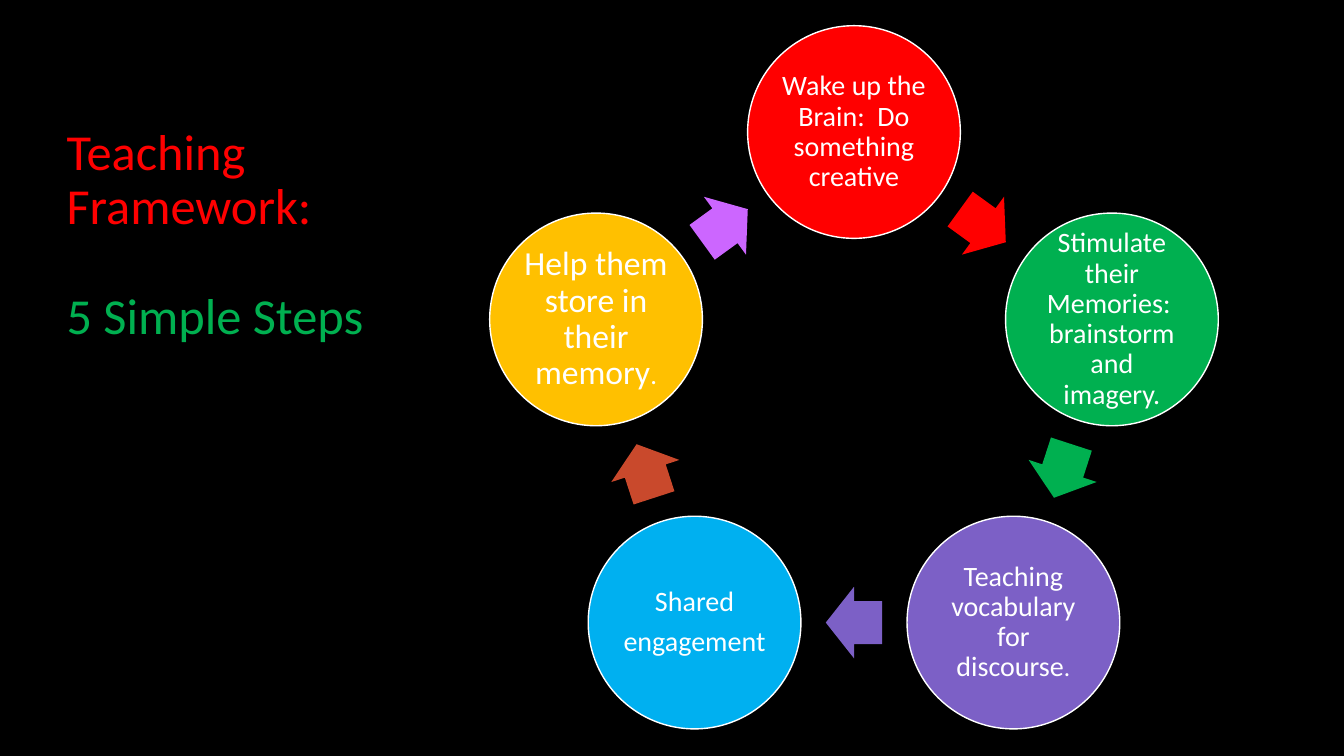
from math import cos, pi, sin

from pptx import Presentation
from pptx.dml.color import RGBColor
from pptx.enum.shapes import MSO_SHAPE
from pptx.enum.text import MSO_ANCHOR, MSO_AUTO_SIZE, PP_ALIGN
from pptx.util import Inches, Pt

ELLIPSE, ARROW = MSO_SHAPE.OVAL, MSO_SHAPE.RIGHT_ARROW
TOP, MIDDLE = MSO_ANCHOR.TOP, MSO_ANCHOR.MIDDLE
LEFT, CENTER = PP_ALIGN.LEFT, PP_ALIGN.CENTER
NO_FIT = MSO_AUTO_SIZE.NONE

THEME = {
    "font": "Calibri",
    "title": 36, "step": 20, "large": 24, "small": 18, "large_stop": 19,
    "black": "000000", "white": "FFFFFF", "red": "FF0000", "green": "00B050",
    "purple": "7C60C6", "blue": "00B0F0", "rust": "C9492C",
    "gold": "FFC000", "pink": "CC66FF",
}


def color(name):
    return RGBColor.from_string(THEME[name])


def write(frame, paragraphs, align, gap):
    """Fill a frame with paragraphs made of (text, size, colour) spans."""
    for index, spans in enumerate(paragraphs):
        para = frame.add_paragraph() if index else frame.paragraphs[0]
        formats = {"alignment": align, "line_spacing": 0.9,
                   "space_before": Pt(gap if index else 0)}
        for name, value in formats.items():
            setattr(para, name, value)
        for text, size, tint in spans:
            span = para.add_run()
            span.text = text
            span.font.name = THEME["font"]
            span.font.size = Pt(THEME[size])
            span.font.bold = False
            span.font.color.rgb = color(tint)


# Deck and black page
deck = Presentation()
deck.slide_width, deck.slide_height = Inches(13.33), Inches(7.5)
page = deck.slides.add_slide(deck.slide_layouts[5])
page.background.fill.solid()
page.background.fill.fore_color.rgb = color("black")

# Title
title = page.shapes.title
title_format = {"left": 0.56, "top": 1.21, "width": 3.58, "height": 3.47}
for name, value in title_format.items():
    setattr(title, name, Inches(value))
title.text_frame.auto_size = NO_FIT
title.text_frame.vertical_anchor = TOP
title.text_frame.word_wrap = True
write(title.text_frame,
      [[("Teaching Framework:", "title", "red")],
       [("5 Simple Steps", "title", "green")]], LEFT, 39)

# Steps, clockwise from the top: circle colour, arrow colour, paragraphs
steps = [
    ("red", "red",
     [[("Wake up the Brain:  Do something creative", "step", "white")]]),
    ("green", "green",
     [[("Stimulate their Memories:  brainstorm and imagery.", "step", "white")]]),
    ("purple", "purple",
     [[("Teaching vocabulary for discourse", "step", "white"),
       (".", "small", "white")]]),
    ("blue", "rust",
     [[("Shared", "step", "white")], [("engagement", "step", "white")]]),
    ("gold", "pink",
     [[("Help them store in their memory", "large", "white"),
       (".", "large_stop", "white")]]),
]

# Ring geometry: each arrow sits midway between two neighbouring circles
CENTER_X, CENTER_Y, RADIUS = 8.47, 4.0, 2.69
DIAMETER, ARROW_LENGTH, ARROW_HEIGHT = 2.11, 0.56, 0.71
STEP_ANGLE = 360 / len(steps)
ARROW_RADIUS = RADIUS * cos(pi / len(steps))

for index, (circle_color, arrow_color, paragraphs) in enumerate(steps):
    # Circle with its text
    angle = 2 * pi * index / len(steps)
    circle = page.shapes.add_shape(
        ELLIPSE,
        Inches(CENTER_X + RADIUS * sin(angle) - DIAMETER / 2),
        Inches(CENTER_Y - RADIUS * cos(angle) - DIAMETER / 2),
        Inches(DIAMETER), Inches(DIAMETER))
    circle.shadow.inherit = False
    circle.fill.solid()
    circle.fill.fore_color.rgb = color(circle_color)
    circle.line.color.rgb = color("white")
    circle.line.width = Pt(1)
    frame = circle.text_frame
    frame_format = {"word_wrap": True, "vertical_anchor": MIDDLE}
    for side in ("left", "top", "right", "bottom"):
        frame_format["margin_" + side] = Inches(0.03)
    for name, value in frame_format.items():
        setattr(frame, name, value)
    write(frame, paragraphs, CENTER, 7)

    # Arrow to the next circle
    angle += pi / len(steps)
    arrow = page.shapes.add_shape(
        ARROW,
        Inches(CENTER_X + ARROW_RADIUS * sin(angle) - ARROW_LENGTH / 2),
        Inches(CENTER_Y - ARROW_RADIUS * cos(angle) - ARROW_HEIGHT / 2),
        Inches(ARROW_LENGTH), Inches(ARROW_HEIGHT))
    arrow.adjustments[0], arrow.adjustments[1] = 0.6, 0.5
    arrow.rotation = STEP_ANGLE * (index + 0.5)
    arrow.shadow.inherit = False
    arrow.fill.solid()
    arrow.fill.fore_color.rgb = color(arrow_color)
    arrow.line.fill.background()

deck.save("out.pptx")
